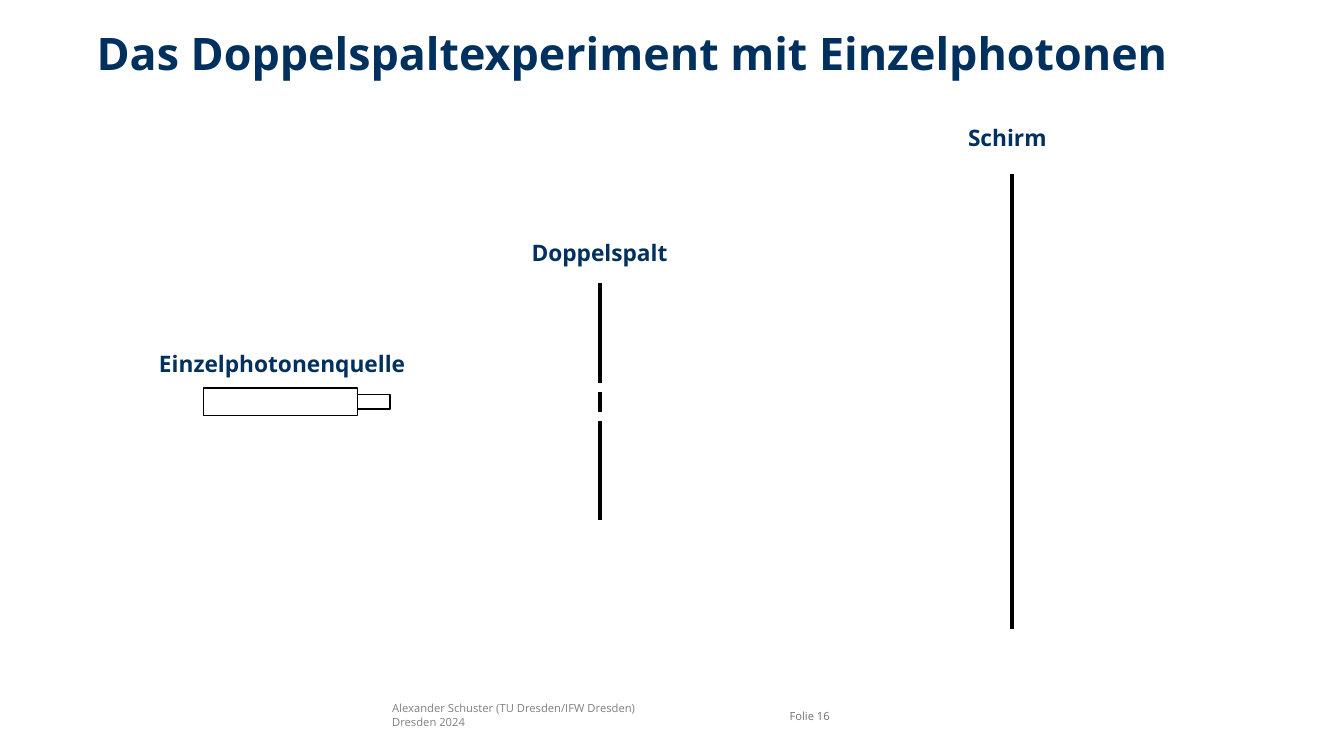
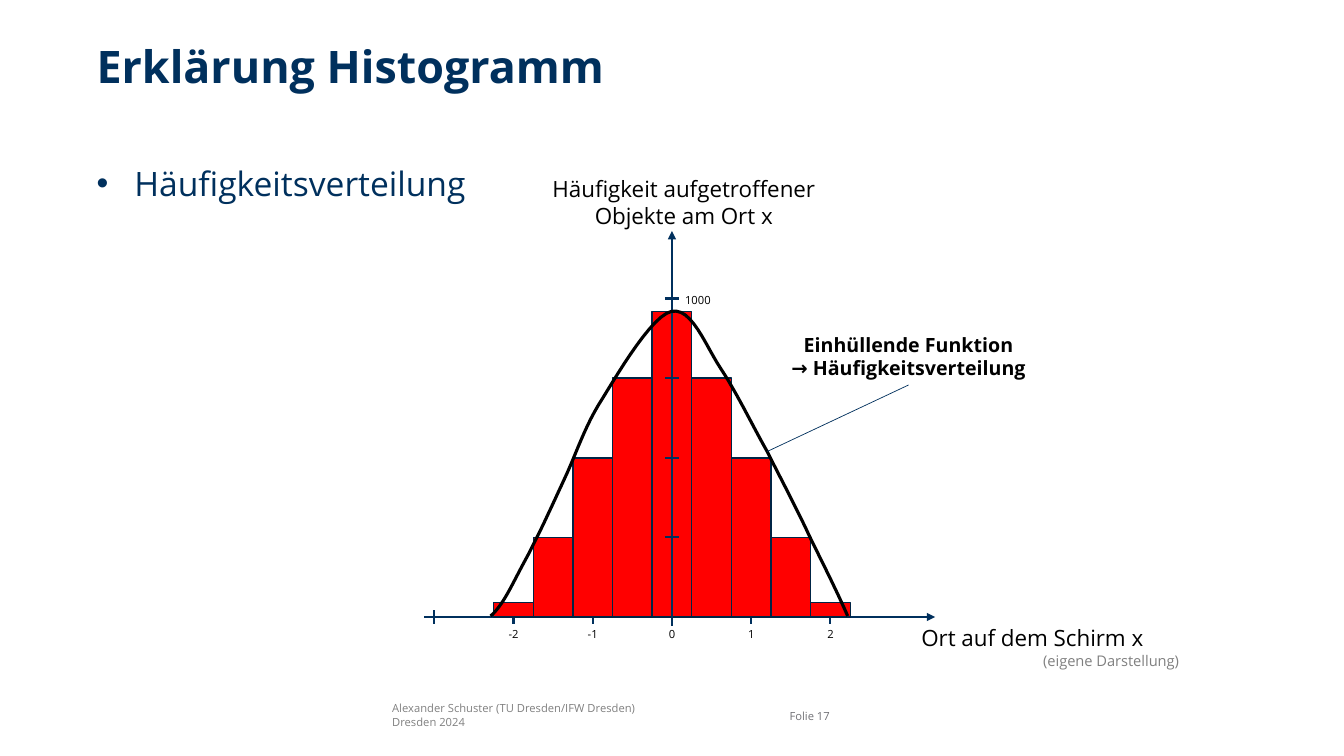
import lxml.etree
import pptx
import pptx.dml.color
import pptx.enum.shapes
import pptx.enum.text
import pptx.oxml.ns
import pptx.util

Pt = pptx.util.Pt
RGB = pptx.dml.color.RGBColor
ALIGN = pptx.enum.text.PP_ALIGN
ANCHOR = pptx.enum.text.MSO_ANCHOR
qn = pptx.oxml.ns.qn

NAVY = RGB(0x00, 0x30, 0x5D)
DARK_NAVY = RGB(0x00, 0x24, 0x45)
RED = RGB(0xFF, 0x00, 0x00)
BLACK = RGB(0x00, 0x00, 0x00)
GREY = RGB(0x80, 0x80, 0x80)
FOLIO_GREY = RGB(0x72, 0x72, 0x77)
FONT = "Open Sans"
INSETS = (7.2, 3.6)
NO_INSETS = (0, 0)


class Deck:
    def __init__(self):
        self.presentation = pptx.Presentation()
        self.presentation.slide_width = Pt(960)
        self.presentation.slide_height = Pt(540)
        self.slide = None

    def new_slide(self, title, title_top, number):
        layout = self.presentation.slide_layouts[6]
        self.slide = self.presentation.slides.add_slide(layout)
        self.text([f"Folie {number}"], 564, 497, 55, 29, 8, FOLIO_GREY,
                  insets=NO_INSETS, anchor=ANCHOR.MIDDLE)
        self.text(["Alexander Schuster (TU Dresden/IFW Dresden)", "Dresden 2024"],
                  273, 497.5, 201, 27, 8, GREY)
        self.text([title], 69, title_top, 833, 54, 32, NAVY, bold=True, insets=NO_INSETS)

    def text(self, lines, left, top, width, height, size, color=BLACK, bold=False,
             align=ALIGN.LEFT, insets=INSETS, anchor=ANCHOR.TOP, bullet=None):
        box = self.slide.shapes.add_textbox(Pt(left), Pt(top), Pt(width), Pt(height))
        frame = box.text_frame
        frame.word_wrap = True
        frame.vertical_anchor = anchor
        frame.margin_left = frame.margin_right = Pt(insets[0])
        frame.margin_top = frame.margin_bottom = Pt(insets[1])
        for index, line in enumerate(lines):
            paragraph = frame.add_paragraph() if index else frame.paragraphs[0]
            paragraph.text = line
            paragraph.alignment = align
            if bullet:
                self.add_bullet(paragraph, bullet)
            paragraph.font.name = FONT
            paragraph.font.size = Pt(size)
            paragraph.font.bold = bold
            paragraph.font.color.rgb = color

    def add_bullet(self, paragraph, character):
        properties = paragraph._p.get_or_add_pPr()
        properties.set("marL", str(Pt(27)))
        properties.set("indent", str(Pt(-27)))
        lxml.etree.SubElement(properties, qn("a:buFont")).set("typeface", "Arial")
        lxml.etree.SubElement(properties, qn("a:buChar")).set("char", character)

    def heading(self, label, left, top, width):
        self.text([label], left, top, width, 28, 16.2, NAVY, bold=True, align=ALIGN.CENTER)

    def tick_label(self, label, left, top, align):
        self.text([label], left, top, 38, 17, 8, align=align)

    def line(self, start, end, color, width, arrow=False):
        connector = self.slide.shapes.add_connector(
            pptx.enum.shapes.MSO_CONNECTOR.STRAIGHT,
            Pt(start[0]), Pt(start[1]), Pt(end[0]), Pt(end[1]))
        connector.line.color.rgb = color
        connector.line.width = Pt(width)
        if arrow:
            stroke = connector.line._get_or_add_ln()
            lxml.etree.SubElement(stroke, qn("a:tailEnd")).set("type", "triangle")
        lxml.etree.SubElement(connector._element.spPr, qn("a:effectLst"))

    def rectangle(self, left, top, width, height, outline, fill=None):
        shape = self.slide.shapes.add_shape(
            pptx.enum.shapes.MSO_SHAPE.RECTANGLE,
            Pt(left), Pt(top), Pt(width), Pt(height))
        self.finish(shape, outline, 1, fill)

    def curve(self, start, segments, color, width, steps=12):
        points = []
        p0 = start
        for p1, p2, p3 in segments:
            for step in range(1, steps + 1):
                t = step / steps
                u = 1 - t
                points.append(tuple(
                    Pt(u**3 * a + 3 * u * u * t * b + 3 * u * t * t * c + t**3 * d)
                    for a, b, c, d in zip(p0, p1, p2, p3)))
            p0 = p3
        builder = self.slide.shapes.build_freeform(Pt(start[0]), Pt(start[1]))
        builder.add_line_segments(points, close=False)
        self.finish(builder.convert_to_shape(), color, width)

    def finish(self, shape, outline, width, fill=None):
        shape.shadow.inherit = False
        if fill is None:
            shape.fill.background()
        else:
            shape.fill.solid()
            shape.fill.fore_color.rgb = fill
        shape.line.color.rgb = outline
        shape.line.width = Pt(width)


def double_slit_slide(deck):
    deck.new_slide("Das Doppelspaltexperiment mit Einzelphotonen", 18, 16)
    beam_y = 287
    for left, width, height in ((145.5, 110, 19.5), (255.5, 23, 10.5)):
        deck.rectangle(left, beam_y - height / 2, width, height, BLACK)
    slit_x, screen_x = 428.5, 723
    for top, bottom in ((-84.5, -13.5), (-7, 7), (13.5, 84.5)):
        deck.line((slit_x, beam_y + top), (slit_x, beam_y + bottom), BLACK, 3)
    deck.line((screen_x, beam_y - 162.5), (screen_x, beam_y + 162.5), BLACK, 3)
    deck.heading("Einzelphotonenquelle", 92, 246, 219)
    deck.heading("Doppelspalt", 368.5, 167, 119.5)
    deck.heading("Schirm", 681.5, 85, 76)


def histogram_slide(deck):
    deck.new_slide("Erklärung Histogramm", 27.5, 17)
    deck.text(["Häufigkeitsverteilung"], 69, 116.5, 833, 342, 24, NAVY,
              insets=NO_INSETS, bullet="•")

    origin_x, base_y = 480, 440.75
    unit, points_per_count = 56.6, 0.2275
    bar_width = unit / 2
    counts = (45, 250, 500, 750, 960, 750, 500, 250, 45)

    deck.line((303, base_y), (668, base_y), NAVY, 1.5, arrow=True)
    for value in range(-3, 3):
        tick_x = origin_x + value * unit
        deck.line((tick_x, base_y - 5), (tick_x, base_y + 5), NAVY, 1.5)
        if value > -3:
            deck.tick_label(str(value), tick_x - 19, 444.25, ALIGN.CENTER)
    for index, count in enumerate(counts):
        left = origin_x + (index - len(counts) / 2) * bar_width
        height = count * points_per_count
        deck.rectangle(left, base_y - height, bar_width, height, DARK_NAVY, RED)
    deck.line((origin_x, 447), (origin_x, 165), NAVY, 1.5, arrow=True)
    for count in range(250, 1001, 250):
        tick_y = base_y - count * points_per_count
        deck.line((origin_x - 5, tick_y), (origin_x + 5, tick_y), NAVY, 1.5)
    deck.tick_label("1000", 482.25, 206, ALIGN.LEFT)

    deck.curve((605.5, 440), (
        ((597, 420.5), (587.5, 402), (578, 382.5)),
        ((569, 363), (558, 342.5), (548, 322.5)),
        ((537, 303), (526.5, 281), (515, 263.5)),
        ((504, 247), (494, 219), (479.5, 222.5)),
        ((466, 225.5), (443, 264), (430.5, 284.5)),
        ((417.5, 304.5), (412, 323.5), (403, 342.5)),
        ((394, 362), (384, 384), (375, 400.5)),
        ((366.5, 416), (359.5, 432.5), (350.5, 440)),
    ), BLACK, 2.25)
    deck.line((548, 322.5), (649, 275), NAVY, 0.5)
    deck.text(["Einhüllende Funktion", "→ Häufigkeitsverteilung"],
              543, 234, 212, 41, 14, bold=True, align=ALIGN.CENTER)
    deck.text(["Häufigkeit aufgetroffener Objekte am Ort x"],
              382, 121.5, 213, 46, 16, align=ALIGN.CENTER)
    deck.text(["Ort auf dem Schirm x"], 651, 442, 197, 27, 16)
    deck.text(["(eigene Darstellung)"], 738, 462, 117, 20, 10.5, GREY)


def main():
    deck = Deck()
    double_slit_slide(deck)
    histogram_slide(deck)
    deck.presentation.save("out.pptx")


if __name__ == "__main__":
    main()
